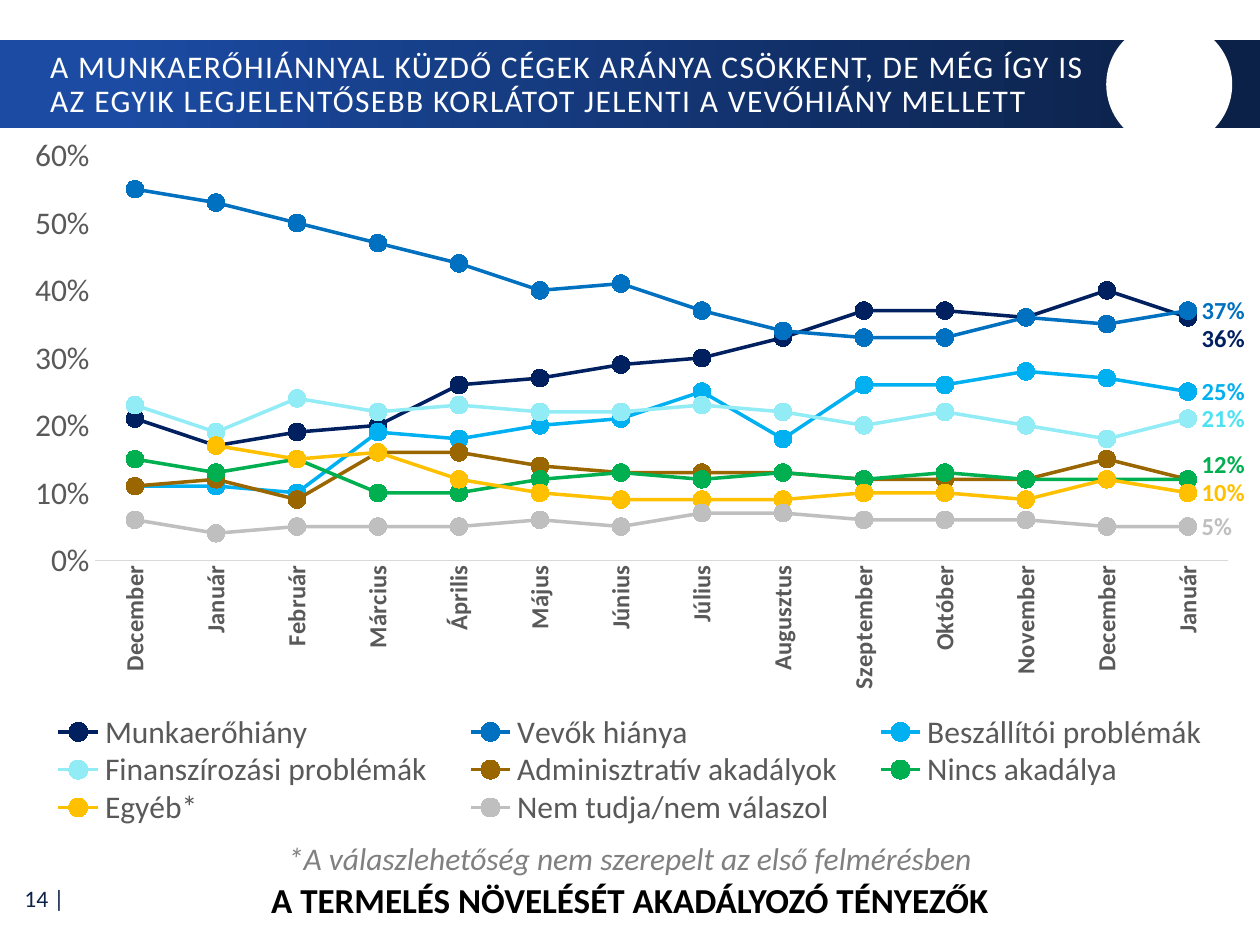
from lxml.etree import SubElement
from pptx import Presentation
from pptx.chart.data import CategoryChartData
from pptx.dml.color import RGBColor
from pptx.enum.chart import XL_CHART_TYPE, XL_LABEL_POSITION, XL_LEGEND_POSITION, XL_MARKER_STYLE, XL_TICK_MARK
from pptx.enum.shapes import MSO_SHAPE
from pptx.enum.text import MSO_ANCHOR, PP_ALIGN
from pptx.oxml import parse_xml
from pptx.oxml.ns import nsdecls, qn
from pptx.util import Inches, Pt


def style_font(font, size, color, bold=False, italic=False):
    font.name = "Calibri"
    font.size = Pt(size)
    font.bold = bold
    font.italic = italic
    font.color.rgb = RGBColor.from_string(color)


def set_layout(element, index, **settings):
    for layout in element.findall(qn("c:layout")):
        element.remove(layout)
    layout = parse_xml(f"<c:layout {nsdecls('c')}/>")
    manual = SubElement(layout, qn("c:manualLayout"))
    for tag, value in settings.items():
        SubElement(manual, qn(f"c:{tag}")).set("val", str(value))
    element.insert(index, layout)


presentation = Presentation()
presentation.slide_width = Inches(10)
presentation.slide_height = Inches(7.5)
slide = presentation.slides.add_slide(presentation.slide_layouts[6])

banner = slide.shapes.add_shape(MSO_SHAPE.RECTANGLE, 0, Inches(0.32), Inches(10), Inches(0.7))
banner.fill.gradient()
banner.fill.gradient_angle = 0
for stop, position, color in zip(banner.fill.gradient_stops, (0.09, 0.95), ("1B4BA3", "0C2148")):
    stop.position = position
    stop.color.rgb = RGBColor.from_string(color)
circle = slide.shapes.add_shape(MSO_SHAPE.OVAL, Inches(8.78), Inches(0.17), Inches(1), Inches(1))
circle.fill.solid()
circle.fill.fore_color.rgb = RGBColor.from_string("FFFFFF")
for shape in (banner, circle):
    shape.line.fill.background()
    shape.shadow.inherit = False

categories = ["December", "Január", "Február", "Március", "Április", "Május", "Június", "Július",
              "Augusztus", "Szeptember", "Október", "November", "December", "Január"]
series_rows = [
    ("Munkaerőhiány", "002060", "002060", 0.03,
     [21, 17, 19, 20, 26, 27, 29, 30, 33, 37, 37, 36, 40, 36]),
    ("Vevők hiánya", "0070C0", "0070C0", 0,
     [55, 53, 50, 47, 44, 40, 41, 37, 34, 33, 33, 36, 35, 37]),
    ("Beszállítói problémák", "00B0F0", "00B0F0", 0,
     [11, 11, 10, 19, 18, 20, 21, 25, 18, 26, 26, 28, 27, 25]),
    ("Finanszírozási problémák", "92ECF6", "4DE2F1", 0,
     [23, 19, 24, 22, 23, 22, 22, 23, 22, 20, 22, 20, 18, 21]),
    ("Adminisztratív akadályok", "996600", None, 0,
     [11, 12, 9, 16, 16, 14, 13, 13, 13, 12, 12, 12, 15, 12]),
    ("Nincs akadálya", "00B050", "00B050", -0.02,
     [15, 13, 15, 10, 10, 12, 13, 12, 13, 12, 13, 12, 12, 12]),
    ("Egyéb*", "FFC000", "FFC000", 0,
     [None, 17, 15, 16, 12, 10, 9, 9, 9, 10, 10, 9, 12, 10]),
    ("Nem tudja/nem válaszol", "BFBFBF", "BFBFBF", 0,
     [6, 4, 5, 5, 5, 6, 5, 7, 7, 6, 6, 6, 5, 5]),
]
chart_data = CategoryChartData(number_format="0%")
chart_data.categories = categories
for name, color, label_color, label_shift, percents in series_rows:
    chart_data.add_series(name, [None if percent is None else percent / 100 for percent in percents])
chart = slide.shapes.add_chart(XL_CHART_TYPE.LINE_MARKERS, 0, Inches(1.01), Inches(10), Inches(5.6),
                               chart_data).chart
style_font(chart.font, 18, "000000")
chart.has_title = False
plot = chart.plots[0]
plot.vary_by_categories = False
set_layout(chart._chartSpace.chart.plotArea, 0, layoutTarget="inner", xMode="edge", yMode="edge",
           x=0.075, y=0.04, w=0.9, h=0.574)

for series, (name, color, label_color, label_shift, percents) in zip(plot.series, series_rows):
    series.smooth = False
    series.format.line.color.rgb = RGBColor.from_string(color)
    series.format.line.width = Pt(2)
    series.marker.style = XL_MARKER_STYLE.CIRCLE
    series.marker.size = 10
    series.marker.format.fill.solid()
    series.marker.format.fill.fore_color.rgb = RGBColor.from_string(color)
    series.marker.format.line.color.rgb = RGBColor.from_string(color)
    if label_color:
        series.data_labels.show_value = False
        label = series.points[len(categories) - 1].data_label
        style_font(label.font, 14, label_color, bold=True)
        label.position = XL_LABEL_POSITION.RIGHT
        if label_shift:
            set_layout(series._element.find(".//" + qn("c:dLbl")), 1, x=0, y=label_shift)

category_axis = chart.category_axis
category_axis.major_tick_mark = XL_TICK_MARK.NONE
category_axis.format.line.color.rgb = RGBColor.from_string("D9D9D9")
category_axis.format.line.width = Pt(0.75)
style_font(category_axis.tick_labels.font, 14, "595959", bold=True)
category_axis._element.find(".//" + qn("a:bodyPr")).set("rot", "-5400000")

value_axis = chart.value_axis
value_axis.minimum_scale = 0
value_axis.maximum_scale = 0.6
value_axis.major_unit = 0.1
value_axis.has_major_gridlines = False
value_axis.major_tick_mark = XL_TICK_MARK.NONE
value_axis.format.line.fill.background()
value_axis.tick_labels.number_format = "0%"
value_axis.tick_labels.number_format_is_linked = False
style_font(value_axis.tick_labels.font, 18, "595959")

chart.has_legend = True
legend = chart.legend
legend.position = XL_LEGEND_POSITION.BOTTOM
legend.include_in_layout = False
style_font(legend.font, 18, "595959")
set_layout(legend._element, 1, xMode="edge", yMode="edge", x=0.02, y=0.83, w=0.96, h=0.16)

text_rows = [
    ("14 |", 0.01, 6.94, 0.6, 0.37, PP_ALIGN.RIGHT, 13.5, "0C2148", False, False),
    ("A MUNKAERŐHIÁNNYAL KÜZDŐ CÉGEK ARÁNYA CSÖKKENT, DE MÉG ÍGY IS AZ EGYIK LEGJELENTŐSEBB "
     "KORLÁTOT JELENTI A VEVŐHIÁNY MELLETT", 0.3, 0.34, 8.67, 0.67, PP_ALIGN.LEFT, 18, "FFFFFF", False, False),
    ("*A válaszlehetőség nem szerepelt az első felmérésben",
     0, 6.61, 10, 0.4, PP_ALIGN.CENTER, 18, "808080", False, True),
    ("A TERMELÉS NÖVELÉSÉT AKADÁLYOZÓ TÉNYEZŐK",
     0.97, 6.92, 8.06, 0.44, PP_ALIGN.CENTER, 20, "000000", True, False),
]
for text, left, top, width, height, alignment, size, color, bold, italic in text_rows:
    box = slide.shapes.add_textbox(Inches(left), Inches(top), Inches(width), Inches(height))
    box.text_frame.word_wrap = True
    box.text_frame.vertical_anchor = MSO_ANCHOR.MIDDLE
    paragraph = box.text_frame.paragraphs[0]
    paragraph.text = text
    paragraph.alignment = alignment
    style_font(paragraph.font, size, color, bold, italic)
    if color == "FFFFFF":
        paragraph.line_spacing = 0.9
        paragraph.runs[0].font._element.set("spc", "80")

presentation.save("out.pptx")
